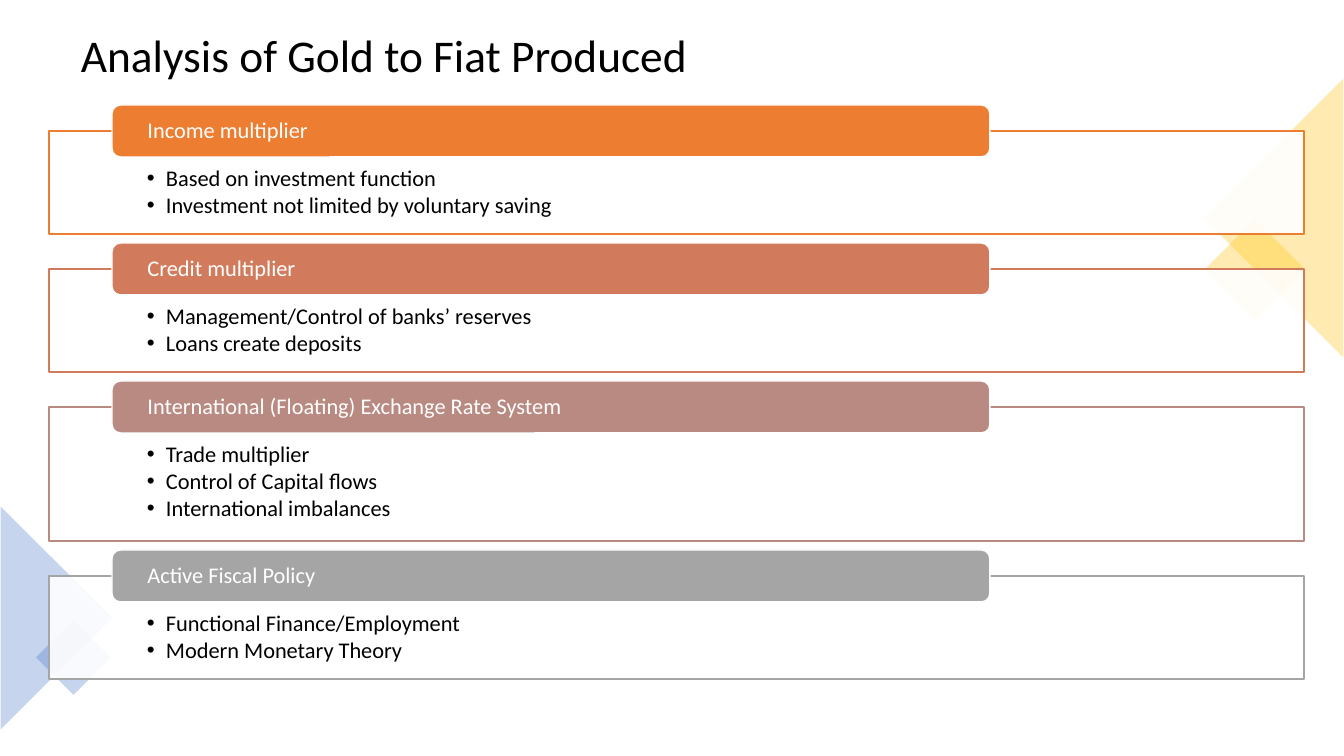
from dataclasses import dataclass

from lxml import etree
from pptx import Presentation
from pptx.dml.color import RGBColor
from pptx.enum.shapes import MSO_SHAPE
from pptx.enum.text import MSO_ANCHOR, PP_ALIGN
from pptx.oxml.ns import qn
from pptx.util import Emu, Pt

RECTANGLE = MSO_SHAPE.RECTANGLE
ROUNDED = MSO_SHAPE.ROUNDED_RECTANGLE
TRIANGLE = MSO_SHAPE.ISOSCELES_TRIANGLE
TOP = MSO_ANCHOR.TOP
MIDDLE = MSO_ANCHOR.MIDDLE
LEFT = PP_ALIGN.LEFT
EMU_PER_PX = 914400 / 100.8


@dataclass(frozen=True)
class Theme:
    font: str = "Calibri"
    title_size: float = 32.4
    body_size: float = 16
    line_spacing: float = 0.9
    bullet_gap: float = 2.2
    outline: float = 1
    ink: str = "000000"
    paper: str = "FFFFFF"
    gold: str = "FFC000"
    blue: str = "4472C4"
    sections: tuple = ("ED7D31", "D17B5C", "B98A82", "A5A5A5")


def px(length):
    return Emu(round(length * EMU_PER_PX))


class SlideBuilder:
    """Draws themed elements on the current slide, measured in px."""

    def __init__(self, slide, theme):
        self.slide = slide
        self.theme = theme

    def shape(self, kind, frame, fill, opacity=100, line=None, rotation=0):
        box = self.slide.shapes.add_shape(kind, *map(px, frame))
        box.shadow.inherit = False
        box.rotation = rotation
        box.fill.solid()
        box.fill.fore_color.rgb = RGBColor.from_string(fill)
        if opacity < 100:
            color = box.element.spPr.find(qn("a:solidFill")).find(qn("a:srgbClr"))
            etree.SubElement(color, qn("a:alpha"), val=str(opacity * 1000))
        if line:
            box.line.color.rgb = RGBColor.from_string(line)
            box.line.width = Pt(self.theme.outline)
        else:
            box.line.fill.background()
        return box

    def add_text(self, box, lines, size, color, anchor, insets, bullet_indent=0):
        frame = box.text_frame
        frame.word_wrap = True
        frame.vertical_anchor = anchor
        (frame.margin_left, frame.margin_top,
         frame.margin_right, frame.margin_bottom) = map(px, insets)
        for index, line in enumerate(lines):
            para = frame.add_paragraph() if index else frame.paragraphs[0]
            para.alignment = LEFT
            para.line_spacing = self.theme.line_spacing
            if bullet_indent:
                para.space_after = Pt(self.theme.bullet_gap)
                self.bullet(para, bullet_indent)
            span = para.add_run()
            span.text = line
            span.font.name = self.theme.font
            span.font.size = Pt(size)
            span.font.color.rgb = RGBColor.from_string(color)

    def bullet(self, para, indent):
        properties = para._p.get_or_add_pPr()
        properties.set("marL", str(px(indent)))
        properties.set("indent", str(-px(indent)))
        etree.SubElement(properties, qn("a:buFont"), typeface="Arial")
        etree.SubElement(properties, qn("a:buChar"), char="•")

    def title(self, text, frame):
        box = self.slide.shapes.add_textbox(*map(px, frame))
        self.add_text(box, [text], self.theme.title_size, self.theme.ink,
                      MIDDLE, (10, 5, 10, 5))

    def section(self, top, height, color, heading, points):
        theme = self.theme
        panel = self.shape(RECTANGLE, (49, top, 1255, height), theme.paper,
                           opacity=90, line=color)
        self.add_text(panel, points, theme.body_size, theme.ink, TOP,
                      (98, 36, 98, 12), bullet_indent=19)
        tab = self.shape(ROUNDED, (112, top - 26, 878, 52), color, line=theme.paper)
        self.add_text(tab, [heading], theme.body_size, theme.paper, MIDDLE,
                      (33, 0, 33, 0))


SECTIONS = (
    ("Income multiplier",
     ("Based on investment function", "Investment not limited by voluntary saving")),
    ("Credit multiplier",
     ("Management/Control of banks’ reserves", "Loans create deposits")),
    ("International (Floating) Exchange Rate System",
     ("Trade multiplier", "Control of Capital flows", "International imbalances")),
    ("Active Fiscal Policy",
     ("Functional Finance/Employment", "Modern Monetary Theory")),
)
PANEL_HEIGHTS = {2: 103, 3: 134}
PANEL_GAP = 35


def main():
    theme = Theme()
    deck = Presentation()
    deck.slide_width = px(1344)
    deck.slide_height = px(756)
    page = SlideBuilder(deck.slides.add_slide(deck.slide_layouts[6]), theme)

    page.title("Analysis of Gold to Fiat Produced", (71, 26, 1203, 64))
    for kind, frame, color, rotation in (
        (RECTANGLE, (1219, 234, 72, 72), theme.gold, 45),
        (TRIANGLE, (1134, 148, 279, 140), theme.gold, 270),
        (TRIANGLE, (-55, 562, 223, 112), theme.blue, 90),
        (RECTANGLE, (47, 631, 53, 53), theme.blue, 45),
    ):
        page.shape(kind, frame, color, opacity=30, rotation=rotation)

    top = 131
    for color, (heading, points) in zip(theme.sections, SECTIONS):
        height = PANEL_HEIGHTS[len(points)]
        page.section(top, height, color, heading, points)
        top += height + PANEL_GAP

    deck.save("out.pptx")


if __name__ == "__main__":
    main()
